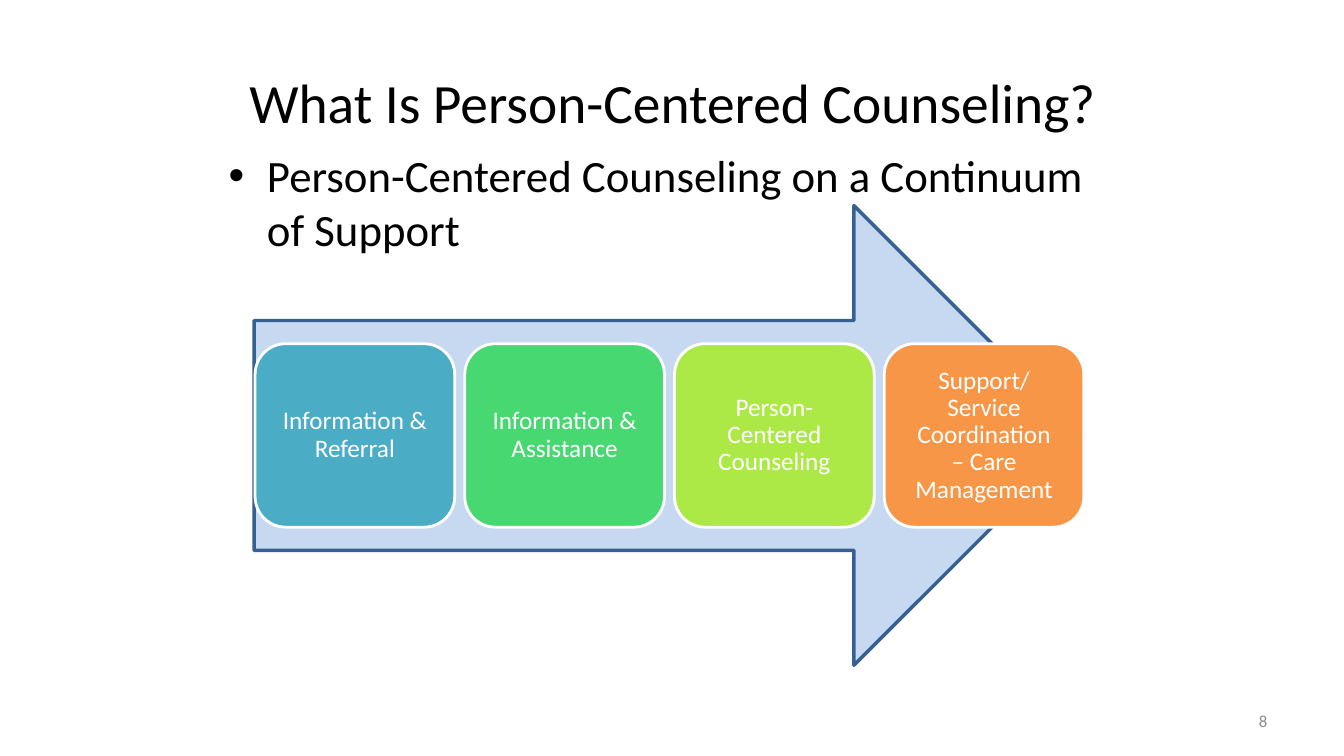
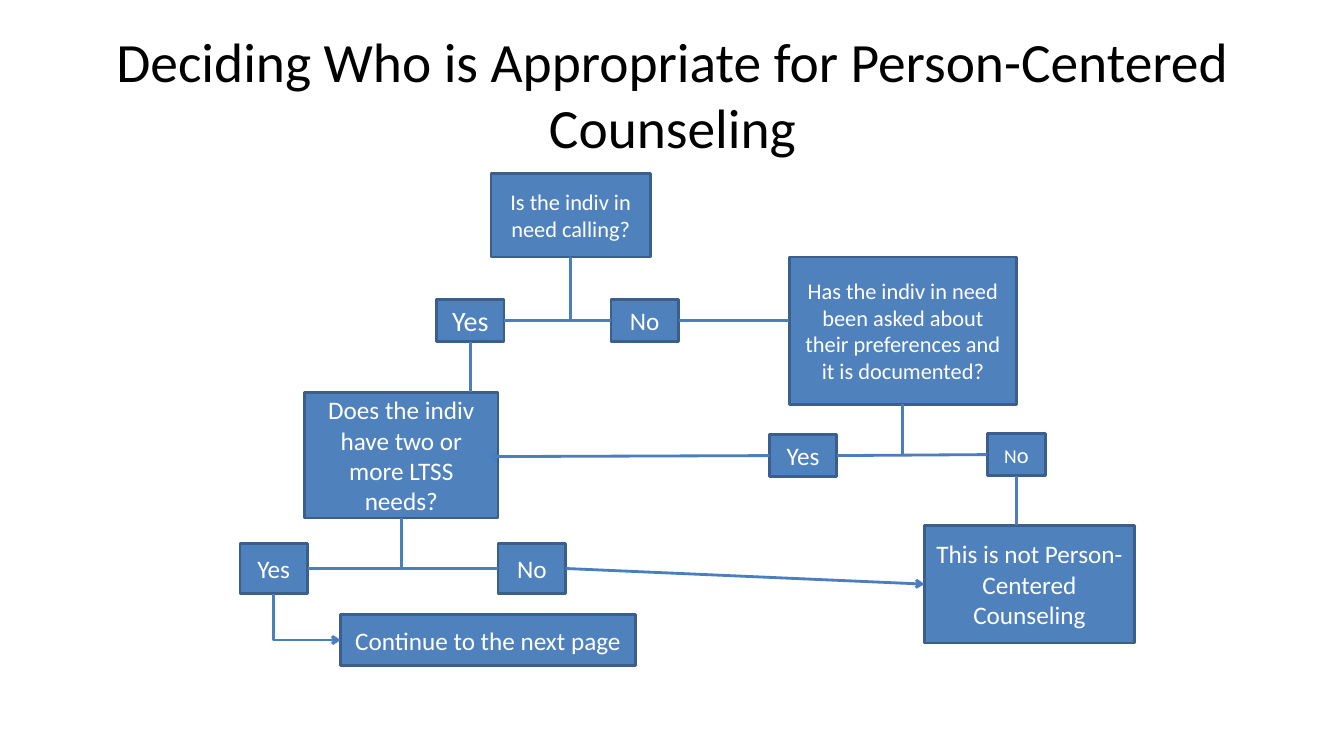
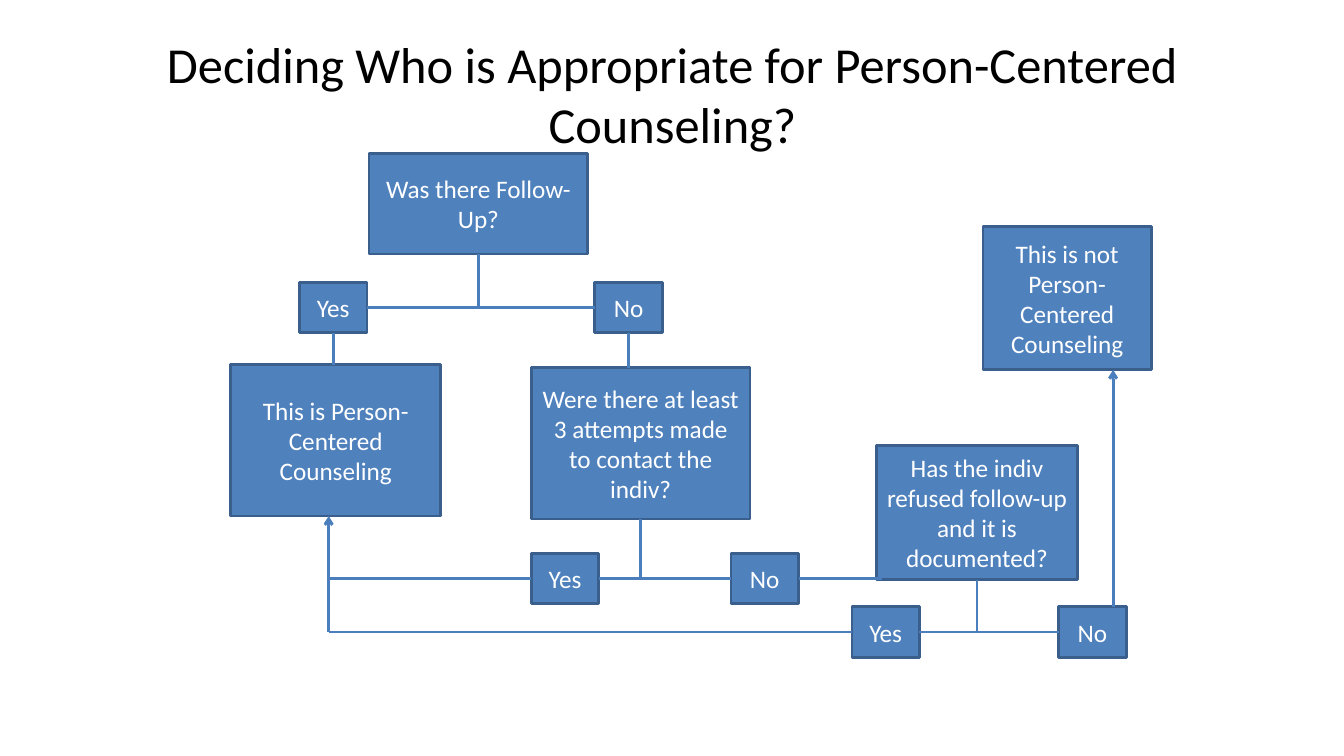
from lxml import etree
from pptx import Presentation
from pptx.dml.color import RGBColor
from pptx.enum.shapes import MSO_CONNECTOR, MSO_SHAPE
from pptx.enum.text import MSO_ANCHOR, MSO_AUTO_SIZE, PP_ALIGN
from pptx.oxml.ns import qn
from pptx.util import Pt

PX = 9144  # EMU in one px, 100 px to the inch
RECT, ROUNDED, ARROW = MSO_SHAPE.RECTANGLE, MSO_SHAPE.ROUNDED_RECTANGLE, MSO_SHAPE.RIGHT_ARROW
STRAIGHT, ELBOW = MSO_CONNECTOR.STRAIGHT, MSO_CONNECTOR.ELBOW
LEFT, CENTER, RIGHT = PP_ALIGN.LEFT, PP_ALIGN.CENTER, PP_ALIGN.RIGHT
TOP_ANCHOR, MIDDLE = MSO_ANCHOR.TOP, MSO_ANCHOR.MIDDLE
TOP_SIDE, LEFT_SIDE, BOTTOM_SIDE, RIGHT_SIDE = range(4)


def px(length):
    return int(length * PX)


def color(value):
    return RGBColor.from_string(value)


class Deck:
    font = "Calibri"
    black, white, gray = "000000", "FFFFFF", "8C8C8C"
    box_fill, box_line, link_line = "4F81BD", "3A5F8C", "4B7EBC"

    def __init__(self):
        self.show = Presentation()
        self.show.slide_width, self.show.slide_height = px(1333), px(750)
        self.page = None

    def add_page(self, title, at, size):
        self.page = self.show.slides.add_slide(self.show.slide_layouts[5])
        holder = self.page.shapes.title
        holder.left, holder.top, holder.width, holder.height = map(px, at)
        self.set_text(holder, title, size, self.black)

    def set_text(self, shape, text, size, ink, align=CENTER, anchor=MIDDLE):
        """Fill a shape with one paragraph; text is a string or (text, size) spans."""
        frame = shape.text_frame
        frame.word_wrap = True
        frame.auto_size = MSO_AUTO_SIZE.NONE
        frame.vertical_anchor = anchor
        para = frame.paragraphs[0]
        para.alignment = align
        for words, points in [(text, size)] if isinstance(text, str) else text:
            span = para.add_run()
            span.text = words
            span.font.name, span.font.size = self.font, Pt(points)
            span.font.color.rgb = color(ink)
        return para

    def text(self, at, text, size, ink, align=LEFT, anchor=TOP_ANCHOR):
        box = self.page.shapes.add_textbox(*map(px, at))
        return self.set_text(box, text, size, ink, align, anchor)

    def bullet(self, at, text, size):
        props = self.text(at, text, size, self.black)._p.get_or_add_pPr()
        props.set("marL", str(px(38)))
        props.set("indent", str(px(-38)))
        etree.SubElement(props, qn("a:buFont"), typeface="Arial")
        etree.SubElement(props, qn("a:buChar"), char="•")

    def shape(self, kind, at, fill, line, weight=2):
        shape = self.page.shapes.add_shape(kind, *map(px, at))
        shape.shadow.inherit = False
        shape.fill.solid()
        shape.fill.fore_color.rgb = color(fill)
        shape.line.color.rgb = color(line)
        shape.line.width = Pt(weight)
        return shape

    def box(self, at, text, size=18):
        box = self.shape(RECT, at, self.box_fill, self.box_line)
        self.set_text(box, text, size, self.white)
        return box

    def card(self, at, text, fill):
        card = self.shape(ROUNDED, at, fill, self.white)
        frame = card.text_frame
        frame.margin_left = frame.margin_right = px(16)
        frame.margin_top = frame.margin_bottom = px(16)
        self.set_text(card, text, 18, self.white).line_spacing = 0.9

    def style_link(self, link, arrow):
        link.line.color.rgb = color(self.link_line)
        link.line.width = Pt(2)
        props = link._element.spPr
        etree.SubElement(props, qn("a:effectLst"))
        if arrow:
            etree.SubElement(props.find(qn("a:ln")), qn("a:tailEnd"), type="arrow")

    def link(self, start, end, arrow=False):
        """Draw a straight line; each end is an (x, y) point or a (box, side) pair."""
        link = self.page.shapes.add_connector(STRAIGHT, 0, 0, 0, 0)
        if isinstance(start[0], (int, float)):
            link.begin_x, link.begin_y = map(px, start)
        else:
            link.begin_connect(*start)
        if isinstance(end[0], (int, float)):
            link.end_x, link.end_y = map(px, end)
        else:
            link.end_connect(*end)
        self.style_link(link, arrow)

    def corner_link(self, x1, y1, x2, y2):
        """Draw an arrow that runs down and then right."""
        mid_x, mid_y = (x1 + x2) / 2, (y1 + y2) / 2
        half_w, half_h = (y2 - y1) / 2, (x2 - x1) / 2
        ends = mid_x + half_w, mid_y - half_h, mid_x - half_w, mid_y + half_h
        link = self.page.shapes.add_connector(ELBOW, *map(px, ends))
        props = link._element.spPr
        props.find(qn("a:prstGeom")).set("prst", "bentConnector2")
        props.find(qn("a:xfrm")).set("rot", str(270 * 60000))
        self.style_link(link, True)

    def branch(self, question, yes, no):
        """Join a question to the line between its two answers."""
        joint_x = (question.left + question.width / 2) / PX
        joint_y = (yes.top + yes.height / 2) / PX
        self.link((question, BOTTOM_SIDE), (joint_x, joint_y))
        self.link((yes, RIGHT_SIDE), (no, LEFT_SIDE))


def continuum_page(deck):
    deck.add_page("What Is Person-Centered Counseling?", (217, 38, 900, 125), 39.6)
    deck.bullet((217, 142, 900, 495), "Person-Centered Counseling on a Continuum of Support", 32)
    deck.text((956, 695, 311, 40), "8", 12, deck.gray, RIGHT, MIDDLE)
    deck.shape(ARROW, (252, 204, 823, 456), "C6D9F1", "376092", 2.5)
    stages = [
        ("Information & Referral", "4BACC6"),
        ("Information & Assistance", "47D872"),
        ("Person-Centered Counseling", "ACE946"),
        ("Support/Service Coordination – Care Management", "F79646"),
    ]
    for index, (stage, fill) in enumerate(stages):
        deck.card((253 + 208 * index, 341, 198, 182), stage, fill)


def needs_page(deck):
    deck.add_page("Deciding Who is Appropriate for Person-Centered Counseling",
                  (67, 30, 1200, 125), 39.6)
    calling = deck.box((487, 172, 158, 83), "Is the indiv in need calling?", 16)
    calling_yes = deck.box((433, 297, 67, 42), "Yes", 20)
    calling_no = deck.box((606, 297, 67, 42), "No")
    asked = deck.box(
        (783, 255, 225, 146),
        "Has the indiv in need been asked about their preferences and it is documented?", 16)
    asked_yes = deck.box((763, 431, 67, 42), "Yes")
    asked_no = deck.box((979, 430, 58, 42), [("N", 14), ("o", 16)])
    needs = deck.box((302, 389, 192, 125), "Does the indiv have two or more LTSS needs?")
    outside = deck.box((917, 521, 208, 117), "This is not Person-Centered Counseling")
    needs_yes = deck.box((238, 539, 67, 50), "Yes")
    needs_no = deck.box((494, 539, 67, 50), "No")
    deck.box((338, 610, 292, 50), "Continue to the next page")

    deck.branch(calling, calling_yes, calling_no)
    deck.branch(asked, asked_yes, asked_no)
    deck.branch(needs, needs_yes, needs_no)
    deck.link((calling_no, RIGHT_SIDE), (783, 318))
    deck.link((calling_yes, BOTTOM_SIDE), (466.5, 389))
    deck.link((asked_no, BOTTOM_SIDE), (1008, 521))
    deck.link((asked_yes, LEFT_SIDE), (483, 453), arrow=True)
    deck.link((needs_no, RIGHT_SIDE), (outside, LEFT_SIDE), arrow=True)
    deck.corner_link(271, 589, 338, 635)


def follow_up_page(deck):
    deck.add_page("Deciding Who is Appropriate for Person-Centered Counseling?",
                  (67, 30, 1200, 125), 36)
    follow_up = deck.box((366, 152, 217, 100), "Was there Follow-Up?")
    follow_up_yes = deck.box((297, 280, 67, 50), "Yes")
    follow_up_no = deck.box((590, 280, 67, 50), "No")
    attempts = deck.box((527, 365, 217, 150),
                        "Were there at least 3 attempts made to contact the indiv?")
    refused = deck.box((869, 442, 200, 133),
                       "Has the indiv refused follow-up and it is documented?")
    attempts_yes = deck.box((527, 549, 67, 50), "Yes")
    refused_yes = deck.box((845, 602, 67, 50), "Yes")
    refused_no = deck.box((1050, 602, 67, 50), "No")
    attempts_no = deck.box((725, 549, 67, 50), "No")
    deck.box((975, 225, 167, 142), "This is not Person-Centered Counseling")
    deck.box((229, 362, 208, 150), "This is Person-Centered Counseling")

    deck.branch(follow_up, follow_up_yes, follow_up_no)
    deck.branch(attempts, attempts_yes, attempts_no)
    deck.branch(refused, refused_yes, refused_no)
    deck.link((follow_up_yes, BOTTOM_SIDE), (330.5, 362))
    deck.link((follow_up_no, BOTTOM_SIDE), (623.5, 365))
    deck.link((attempts_no, RIGHT_SIDE), (875, 574))
    deck.link((1104, 602), (1104, 367), arrow=True)
    deck.link((refused_yes, LEFT_SIDE), (326, 627))
    deck.link((attempts_yes, LEFT_SIDE), (326, 574))
    deck.link((326, 627), (326, 512), arrow=True)


def main():
    deck = Deck()
    continuum_page(deck)
    needs_page(deck)
    follow_up_page(deck)
    deck.show.save("out.pptx")


if __name__ == "__main__":
    main()
